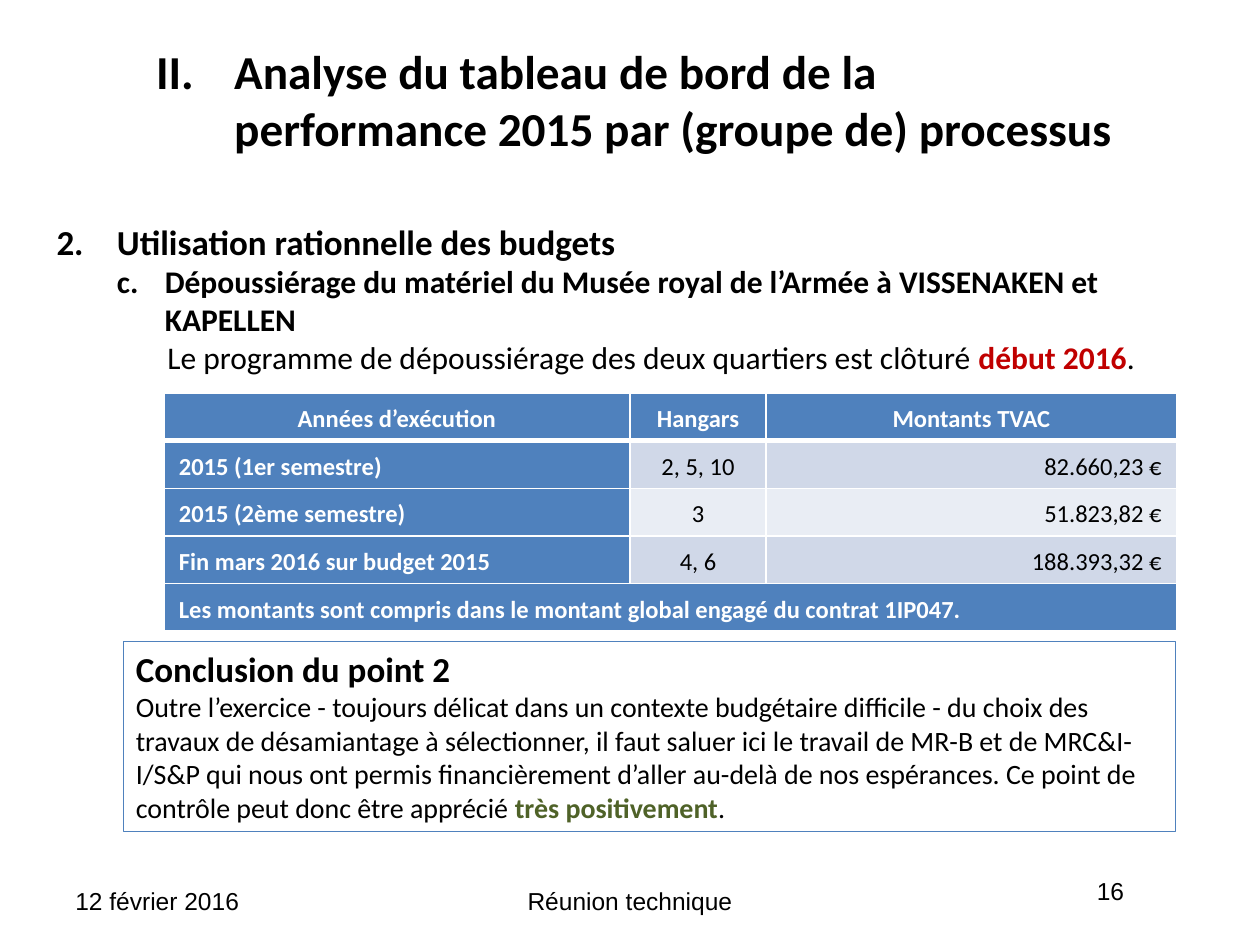
from lxml.etree import SubElement
from pptx import Presentation
from pptx.dml.color import RGBColor
from pptx.enum.shapes import MSO_SHAPE as Shape
from pptx.enum.text import MSO_ANCHOR as Anchor, PP_ALIGN as Align
from pptx.oxml import parse_xml
from pptx.oxml.ns import nsdecls, qn
from pptx.util import Inches, Pt

COLORS = {
    "black": "000000", "white": "FFFFFF", "blue": "4F81BD", "band": "D0D8E8",
    "light_band": "E9EDF4", "red": "C00000", "green": "4F6228",
}


def rgb(name):
    return RGBColor.from_string(COLORS[name])


class SlideBuilder:
    base = {"name": "Calibri", "size": 18, "bold": False, "color": "black"}

    def __init__(self, slide):
        self.slide = slide

    def add_run(self, paragraph, text, **style):
        run = paragraph.add_run()
        run.text = text
        values = {**self.base, **style}
        run.font.color.rgb = rgb(values.pop("color"))
        values["size"] = Pt(values["size"])
        for key, value in values.items():
            setattr(run.font, key, value)

    def fill_text(self, frame, paragraphs, anchor=Anchor.TOP):
        """Each paragraph is (format, runs); each run is (text, style)."""
        frame.word_wrap = True
        frame.vertical_anchor = anchor
        for index, (layout, runs) in enumerate(paragraphs):
            paragraph = frame.add_paragraph() if index else frame.paragraphs[0]
            paragraph.alignment = layout.get("align", Align.LEFT)
            paragraph.line_spacing = layout.get("spacing")
            properties = paragraph._p.get_or_add_pPr()
            if "margin" in layout:
                properties.set("marL", str(Inches(layout["margin"])))
                properties.set("indent", str(-Inches(layout.get("hang", 0))))
            if "number" in layout:
                scheme, start = layout["number"]
                SubElement(properties, qn("a:buAutoNum"), type=scheme, startAt=str(start))
            for text, style in runs:
                self.add_run(paragraph, text, **style)

    def text(self, box, paragraphs, anchor=Anchor.TOP):
        shape = self.slide.shapes.add_textbox(*map(Inches, box))
        self.fill_text(shape.text_frame, paragraphs, anchor)

    def footer(self, box, text, align):
        self.text(box, [({"align": align}, [(text, {"name": "Arial", "size": 14})])])

    def framed_text(self, box, paragraphs):
        shape = self.slide.shapes.add_shape(Shape.RECTANGLE, *map(Inches, box))
        shape.shadow.inherit = False
        shape.fill.background()
        shape.line.color.rgb = rgb("blue")
        shape.line.width = Pt(0.75)
        self.fill_text(shape.text_frame, paragraphs)

    def cell(self, cell, text, align, fill, header, borders):
        margins = {"margin_left": 0.12, "margin_right": 0.12, "margin_top": 0, "margin_bottom": 0}
        for key, value in margins.items():
            setattr(cell, key, Inches(value))
        cell.vertical_anchor = Anchor.MIDDLE
        cell.fill.solid()
        cell.fill.fore_color.rgb = rgb(fill)
        style = {"size": 14, "bold": header, "color": "white" if header else "black"}
        self.fill_text(cell.text_frame, [({"align": align, "spacing": 1.15}, [(text, style)])],
                       Anchor.MIDDLE)
        for index, (side, width) in enumerate(borders.items()):
            line = parse_xml(
                f'<a:ln{side} {nsdecls("a")} w="{Pt(width)}"><a:solidFill>'
                f'<a:srgbClr val="{COLORS["white"]}"/></a:solidFill></a:ln{side}>')
            cell._tc.get_or_add_tcPr().insert(index, line)

    def table(self, box, widths, rows, aligns):
        frame = self.slide.shapes.add_table(len(rows), len(widths), *map(Inches, box))
        table = frame.table
        table.horz_banding = False
        for column, width in zip(table.columns, widths):
            column.width = Inches(width)
        for row_index, row in enumerate(rows):
            band = "band" if row_index % 2 else "light_band"
            borders = {"L": 1, "R": 1, "T": 3 if row_index == 1 else 1,
                       "B": 3 if row_index == 0 else 1}
            if len(row) == 1:
                table.cell(row_index, 0).merge(table.cell(row_index, len(widths) - 1))
            for column_index, text in enumerate(row):
                header = row_index == 0 or column_index == 0
                align = Align.CENTER if row_index == 0 else aligns[column_index]
                self.cell(table.cell(row_index, column_index), text, align,
                          "blue" if header else band, header, borders)


def main():
    presentation = Presentation()
    presentation.slide_width = Inches(10)
    presentation.slide_height = Inches(7.5)
    builder = SlideBuilder(presentation.slides.add_slide(presentation.slide_layouts[6]))

    # Title
    builder.text((1.14, 0.36, 7.88, 0.85), [
        ({"margin": 0.62, "hang": 0.62, "number": ("romanUcPeriod", 2)},
         [("Analyse du tableau de bord de la performance 2015 par (groupe de) processus",
           {"size": 27, "bold": True})]),
    ], Anchor.MIDDLE)

    # Numbered headings
    builder.text((0.35, 1.7, 9.45, 1.35), [
        ({"margin": 0.48, "hang": 0.48, "number": ("arabicPeriod", 2)},
         [("Utilisation rationnelle des budgets", {"size": 20, "bold": True})]),
        ({"margin": 0.86, "hang": 0.38, "number": ("alphaLcPeriod", 3)},
         [("Dépoussiérage du matériel du Musée royal de l’Armée à VISSENAKEN et KAPELLEN",
           {"bold": True})]),
        ({"margin": 0.88},
         [("Le programme de dépoussiérage des deux quartiers est clôturé ", {}),
          ("début 2016", {"bold": True, "color": "red"}),
          (".", {})]),
    ])

    # Amounts by period
    builder.table((1.3, 3.12, 8.03, 1.89), (3.7, 1.08, 3.26), [
        ("Années d’exécution", "Hangars", "Montants TVAC"),
        ("2015 (1er semestre)", "2, 5, 10", "82.660,23 €"),
        ("2015 (2ème semestre)", "3", "51.823,82 €"),
        ("Fin mars 2016 sur budget 2015", "4, 6", "188.393,32 €"),
        ("Les montants sont compris dans le montant global engagé du contrat 1IP047.",),
    ], (Align.LEFT, Align.CENTER, Align.RIGHT))

    # Conclusion
    builder.framed_text((0.98, 5.09, 8.35, 1.51), [
        ({}, [("Conclusion du point 2", {"size": 20, "bold": True})]),
        ({}, [("Outre l’exercice - toujours délicat dans un contexte budgétaire difficile - "
               "du choix des travaux de désamiantage à sélectionner, il faut saluer ici le "
               "travail de MR-B et de MRC&I-I/S&P qui nous ont permis financièrement d’aller "
               "au-delà de nos espérances. Ce point de contrôle peut donc être apprécié ",
               {"size": 16}),
              ("très positivement", {"size": 16, "bold": True, "color": "green"}),
              (".", {"size": 16})]),
    ])

    # Footer
    builder.footer((0.5, 6.98, 2.33, 0.37), "12 février 2016", Align.LEFT)
    builder.footer((3.11, 6.98, 3.78, 0.37), "Réunion technique", Align.CENTER)
    builder.footer((7.17, 6.9, 1.85, 0.52), "16", Align.RIGHT)

    presentation.save("out.pptx")


if __name__ == "__main__":
    main()
